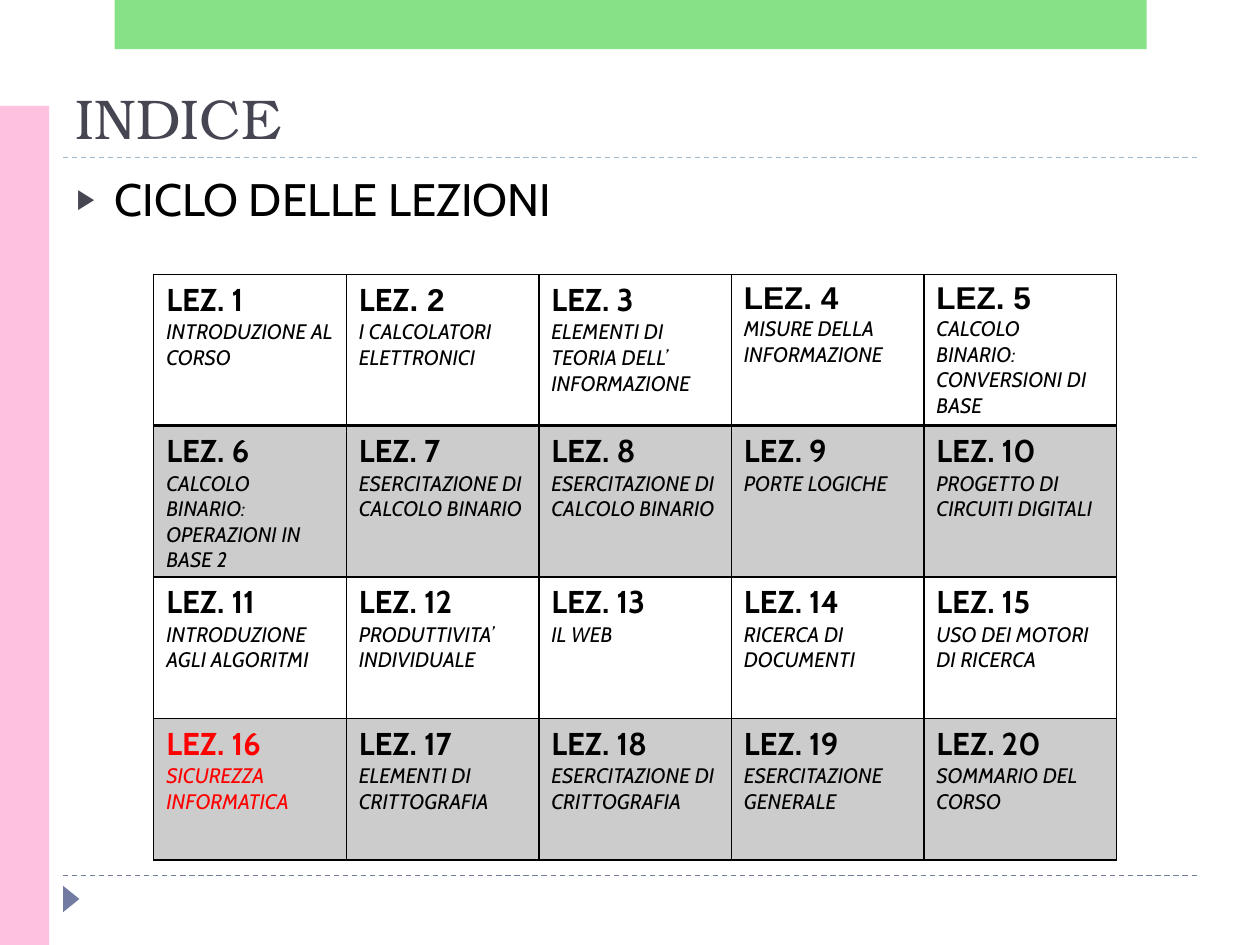
import pptx
import pptx.dml.color
import pptx.enum.dml
import pptx.enum.shapes
import pptx.enum.text
import pptx.oxml
import pptx.oxml.ns
import pptx.util
from dataclasses import dataclass

Inches = pptx.util.Inches
Pt = pptx.util.Pt
RGB = pptx.dml.color.RGBColor.from_string
Shape = pptx.enum.shapes.MSO_SHAPE
NS = pptx.oxml.ns.nsdecls("a")


@dataclass(frozen=True)
class Theme:
    heading_font: str = "TeX Gyre Bonum"
    body_font: str = "Cabin"
    number_font: str = "Arial"
    title_size: int = 32
    subtitle_size: int = 26
    lesson_size: int = 18
    topic_size: int = 12
    slate: str = "464653"
    blue: str = "727CA3"
    pale_blue: str = "9FB8CD"
    pink: str = "FFC1E0"
    green: str = "62D862"
    black: str = "000000"
    current: str = "FF0000"
    white: str = "FFFFFF"


theme = Theme()


def write(paragraph, text, *, font=theme.body_font, size, color=theme.black,
          bold=False, italic=False):
    """Append text to the paragraph; a newline becomes a line break of the same size."""
    for index, line in enumerate(text.split("\n")):
        if index:
            paragraph.add_line_break()
            line_break = paragraph._p.findall(pptx.oxml.ns.qn("a:br"))[-1]
            line_break.append(pptx.oxml.parse_xml(f'<a:rPr {NS} sz="{size * 100}"/>'))
        run = paragraph.add_run()
        run.text = line
        run.font.name = font
        run.font.size = Pt(size)
        run.font.bold = bold
        run.font.italic = italic
        run.font.color.rgb = RGB(color)


def fill_solid(fill, color, opacity=100):
    fill.solid()
    fill.fore_color.rgb = RGB(color)
    if opacity < 100:
        solid = fill._xPr.find(pptx.oxml.ns.qn("a:solidFill"))
        solid[0].append(pptx.oxml.parse_xml(f'<a:alpha {NS} val="{opacity * 1000}"/>'))


deck = pptx.Presentation()
deck.slide_width, deck.slide_height = Inches(10), Inches(7.5)
slide = deck.slides.add_slide(deck.slide_layouts[5])
fill_solid(slide.background.fill, theme.white)

# Rules, bands and corner marker
for y, color in ((6.95, theme.blue), (1.25, theme.pale_blue)):
    rule = slide.shapes.add_connector(pptx.enum.shapes.MSO_CONNECTOR.STRAIGHT,
                                      Inches(0.5), Inches(y), Inches(9.5), Inches(y))
    rule.line.color.rgb = RGB(color)
    rule.line.width = Pt(0.75)
    rule.line.dash_style = pptx.enum.dml.MSO_LINE.DASH
    rule._element.spPr.append(pptx.oxml.parse_xml(f"<a:effectLst {NS}/>"))

for kind, box, rotation, color, opacity in (
    (Shape.ISOSCELES_TRIANGLE, (0.46, 7.07, 0.21, 0.13), 90, theme.blue, 100),
    (Shape.RECTANGLE, (0, 0.84, 0.39, 6.66), 0, theme.pink, 100),
    (Shape.RECTANGLE, (0.91, 0, 8.19, 0.39), 0, theme.green, 76),
):
    decoration = slide.shapes.add_shape(kind, *map(Inches, box))
    decoration.rotation = rotation
    decoration.shadow.inherit = False
    decoration.line.fill.background()
    fill_solid(decoration.fill, color, opacity)

# Title and subtitle
title = slide.shapes.title
title.left, title.top, title.width, title.height = map(Inches, (0.5, 0.55, 9, 0.7))
title.text_frame.vertical_anchor = pptx.enum.text.MSO_ANCHOR.BOTTOM
heading = title.text_frame.paragraphs[0]
heading.alignment = pptx.enum.text.PP_ALIGN.LEFT
write(heading, "INDICE", font=theme.heading_font, size=theme.title_size, color=theme.slate)

subtitle = slide.shapes.add_textbox(*map(Inches, (0.51, 1.31, 9, 0.79))).text_frame
subtitle.word_wrap = True
cycle = subtitle.paragraphs[0]
bullet = cycle._p.get_or_add_pPr()
bullet.set("marL", str(Inches(0.3)))
bullet.set("indent", str(-Inches(0.3)))
for xml in (f'<a:buClr {NS}><a:srgbClr val="{theme.slate}"/></a:buClr>',
            f'<a:buSzPct {NS} val="61000"/>',
            f'<a:buFont {NS} typeface="{theme.number_font}"/>',
            f'<a:buChar {NS} char="▶"/>'):
    bullet.append(pptx.oxml.parse_xml(xml))
write(cycle, "CICLO DELLE LEZIONI", size=theme.subtitle_size)

# Lesson grid
topics = [
    "INTRODUZIONE AL CORSO", "I CALCOLATORI \nELETTRONICI",
    "ELEMENTI DI TEORIA DELL’\nINFORMAZIONE", "MISURE DELLA INFORMAZIONE",
    "CALCOLO BINARIO: CONVERSIONI DI BASE",
    "CALCOLO BINARIO: OPERAZIONI IN BASE 2", "ESERCITAZIONE DI CALCOLO BINARIO",
    "ESERCITAZIONE DI CALCOLO BINARIO", "PORTE LOGICHE", "PROGETTO DI CIRCUITI DIGITALI",
    "INTRODUZIONE AGLI ALGORITMI", "PRODUTTIVITA’ INDIVIDUALE", "IL WEB",
    "RICERCA DI DOCUMENTI", "USO DEI MOTORI DI RICERCA",
    "SICUREZZA INFORMATICA", "ELEMENTI DI CRITTOGRAFIA", "ESERCITAZIONE DI CRITTOGRAFIA",
    "ESERCITAZIONE GENERALE", "SOMMARIO DEL CORSO",
]
COLUMNS = 5
ROWS = len(topics) // COLUMNS
CURRENT_LESSON = 16
# Fonts of "LEZ" and of the number after it, where they are not the body font
label_fonts = {
    2: (theme.body_font, theme.number_font),
    4: (theme.number_font, theme.number_font),
    5: (theme.number_font, theme.number_font),
}

lessons = slide.shapes.add_table(ROWS, COLUMNS, *map(Inches, (1.22, 2.18, 7.64, 4.49))).table
lessons.first_row = False
lessons.horz_banding = False
for column in lessons.columns:
    column.width = Inches(7.64 / COLUMNS)
for row in lessons.rows:
    row.height = Inches(4.49 / ROWS)

for index, topic in enumerate(topics):
    row, column = divmod(index, COLUMNS)
    number = index + 1
    cell = lessons.cell(row, column)
    widths = {"L": 1, "R": 1, "T": 2 if row == 1 else 1, "B": 2 if row == 0 else 1}
    for side, width in widths.items():
        cell._tc.get_or_add_tcPr().append(pptx.oxml.parse_xml(
            f'<a:ln{side} {NS} w="{Pt(width)}"><a:solidFill>'
            f'<a:srgbClr val="{theme.black}"/></a:solidFill></a:ln{side}>'))
    if row % 2:
        fill_solid(cell.fill, theme.black, 20)
    else:
        cell.fill.background()

    color = theme.current if number == CURRENT_LESSON else theme.black
    label = cell.text_frame.paragraphs[0]
    word_font, number_font = label_fonts.get(number, (theme.body_font, theme.body_font))
    if word_font == number_font:
        parts = [(f"LEZ. {number}", word_font)]
    else:
        parts = [("LEZ", word_font), (f". {number}", number_font)]
    for text, font in parts:
        write(label, text, font=font, size=theme.lesson_size, color=color, bold=True)
    write(cell.text_frame.add_paragraph(), topic,
          size=theme.topic_size, color=color, italic=True)

deck.save("out.pptx")
